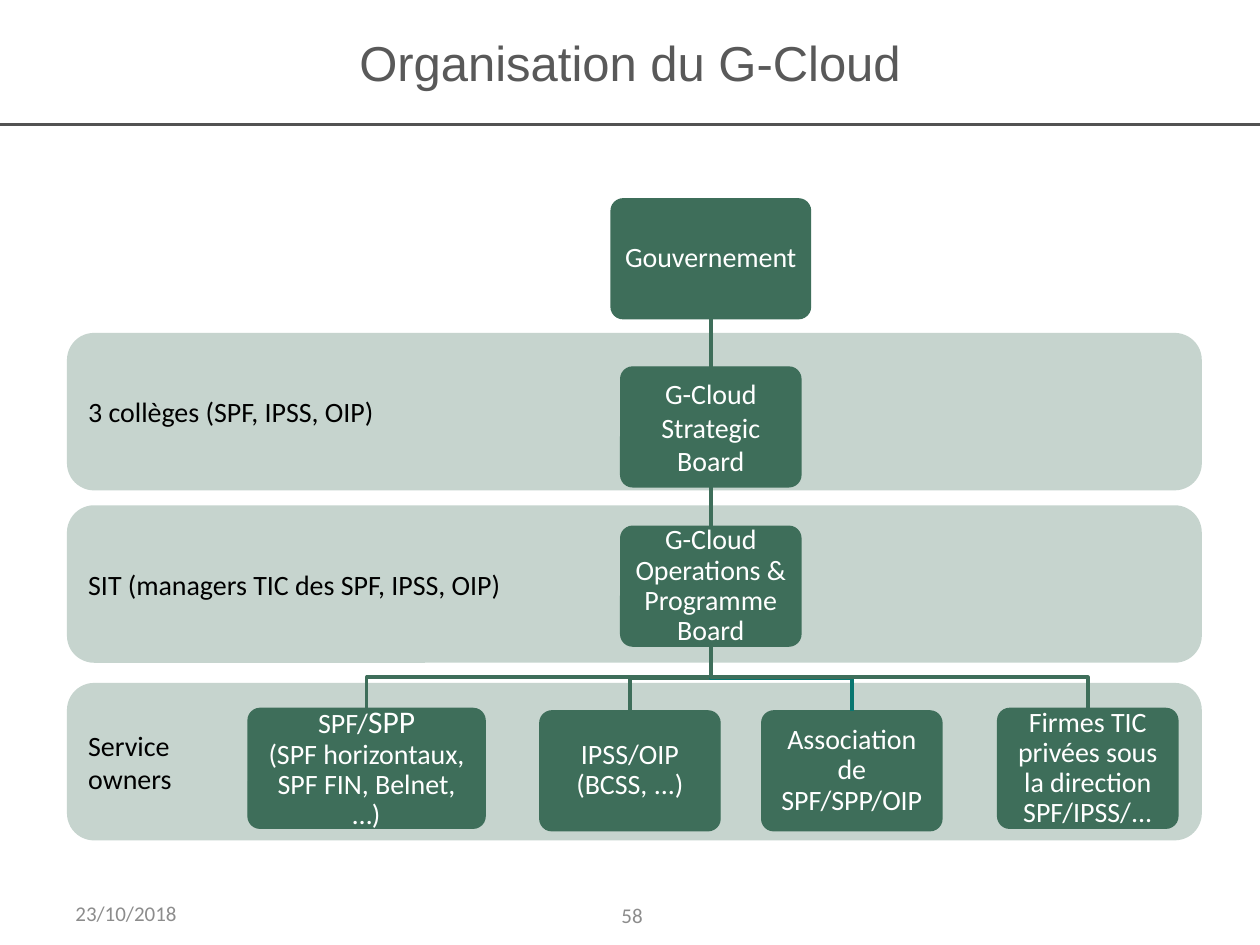
"""Build the G-Cloud organisation chart slide."""
from lxml import etree
from pptx import Presentation
from pptx.dml import color
from pptx.enum import shapes, text
from pptx.oxml import ns
from pptx.util import Pt

GREEN, PALE, TEAL, GREY = "3E6E5A", "C6D4CE", "087670", "8C8C8C"
CENTRE, MIDDLE = text.PP_ALIGN.CENTER, text.MSO_ANCHOR.MIDDLE


def rgb(value):
    return color.RGBColor.from_string(value)


def apply(target, values):
    for name, value in values.items():
        setattr(target, name, value)


class OrgSlide:
    """Holds the style and the current slide."""

    font = "Calibri"
    size = 16
    box_height = 68.5

    def __init__(self, deck):
        self.slide = deck.slides.add_slide(deck.slide_layouts[5])
        self.shapes = self.slide.shapes

    def fill_text(self, frame, paragraphs, hue, align=text.PP_ALIGN.LEFT,
                  spacing=1.0, margin=7.2, font=None):
        """Fill a frame with paragraphs, each a list of (wording, size) runs."""
        apply(frame, dict(word_wrap=True, vertical_anchor=MIDDLE,
                          auto_size=text.MSO_AUTO_SIZE.NONE,
                          margin_left=Pt(margin), margin_right=Pt(margin),
                          margin_top=Pt(3.6), margin_bottom=Pt(3.6)))
        for index, runs in enumerate(paragraphs):
            paragraph = frame.paragraphs[0] if index == 0 else frame.add_paragraph()
            apply(paragraph, dict(alignment=align, line_spacing=spacing))
            for wording, size in runs:
                if wording == "\n":
                    paragraph.add_line_break()
                    continue
                run = paragraph.add_run()
                run.text = wording
                apply(run.font, dict(name=font or self.font, size=Pt(size), bold=False))
                run.font.color.rgb = rgb(hue)

    def title(self, wording):
        heading = self.shapes.title
        apply(heading, dict(left=0, top=0, width=Pt(720), height=Pt(71.3)))
        self.fill_text(heading.text_frame, [[(wording, 28)]], "595959", CENTRE,
                       font="Arial")

    def label(self, left, top, wording, align):
        note = self.shapes.add_textbox(Pt(left), Pt(top), Pt(168), Pt(28.8))
        self.fill_text(note.text_frame, [[(wording, 12)]], GREY, align)

    def rounded(self, left, top, width, height, hue, line_width):
        block = self.shapes.add_shape(shapes.MSO_SHAPE.ROUNDED_RECTANGLE,
                                      Pt(left), Pt(top), Pt(width), Pt(height))
        block.shadow.inherit = False
        block.fill.solid()
        block.fill.fore_color.rgb = rgb(hue)
        self.stroke(block, hue, line_width)
        return block

    def stroke(self, target, hue, width):
        target.line.color.rgb = rgb(hue)
        target.line.width = Pt(width)

    def band(self, top, *lines):
        level = self.rounded(39, top, 647, 88.5, PALE, 1.5)
        self.fill_text(level.text_frame, [[(line, self.size)] for line in lines],
                       "000000")

    def box(self, centre, top, width, runs, spacing=0.9):
        body = self.rounded(centre - width / 2, top, width, self.box_height, GREEN, 0.75)
        body.adjustments[0] = 0.1
        self.fill_text(body.text_frame, [runs], "FFFFFF", CENTRE, spacing, margin=5.5)
        return body

    def line(self, start, end, hue, width):
        link = self.shapes.add_connector(shapes.MSO_CONNECTOR.STRAIGHT,
                                         *(Pt(value) for value in (*start, *end)))
        self.stroke(link, hue, width)
        etree.SubElement(link._element.spPr, ns.qn("a:effectLst"))
        return link

    def join(self, upper, lower):
        link = self.line((0, 0), (0, 0), GREEN, 2)
        link.begin_connect(upper, 2)
        link.end_connect(lower, 0)

    def branch(self, parent, child, hue):
        """Draw a bent line from the parent's bottom to the child's top."""
        start_x, end_x = (part.left + part.width // 2 for part in (parent, child))
        start_y, end_y = parent.top + parent.height, child.top
        bend_y = (start_y + end_y) // 2
        outline = self.shapes.build_freeform(start_x, start_y)
        outline.add_line_segments([(start_x, bend_y), (end_x, bend_y), (end_x, end_y)],
                                  close=False)
        bent = outline.convert_to_shape()
        bent.shadow.inherit = False
        bent.fill.background()
        self.stroke(bent, hue, 2)


def main():
    deck = Presentation()
    apply(deck, dict(slide_width=Pt(720), slide_height=Pt(540)))
    page = OrgSlide(deck)
    page.line((0, 71.3), (720, 71.3), "525252", 1.5)
    page.title("Organisation du G-Cloud")

    page.band(191, "3 collèges (SPF, IPSS, OIP)")
    page.band(289.5, "SIT (managers TIC des SPF, IPSS, OIP)")
    page.band(391, "Service", "owners")

    trunk = 406.2
    government = page.box(trunk, 113.6, 114, [("Gouvernement", 16)])
    strategic = page.box(trunk, 209.7, 103, [("G-Cloud Strategic Board", 16)], 1.0)
    operations = page.box(trunk, 300.7, 103,
                          [("G-Cloud Operations & Programme Board", 16)])
    page.join(government, strategic)
    page.join(strategic, operations)

    owners = [
        (209.5, 404.8, 135.5, GREEN,
         [("SPF/", 16), ("SPP", 18), ("\n", 18),
          ("(SPF horizontaux, SPF FIN, Belnet, …)", 16)]),
        (360, 406.2, 103, GREEN, [("IPSS/OIP (BCSS, ...)", 16)]),
        (486.8, 406.2, 103, TEAL, [("Association de SPF/SPP/OIP", 16)]),
        (621.6, 404.8, 103, GREEN,
         [("Firmes TIC privées sous la direction SPF/IPSS/...", 16)]),
    ]
    for centre, top, width, hue, runs in owners:
        page.branch(operations, page.box(centre, top, width, runs), hue)

    page.label(36, 507.6, "23/10/2018", text.PP_ALIGN.LEFT)
    page.label(277.2, 508.3, "58", CENTRE)
    deck.save("out.pptx")


if __name__ == "__main__":
    main()
